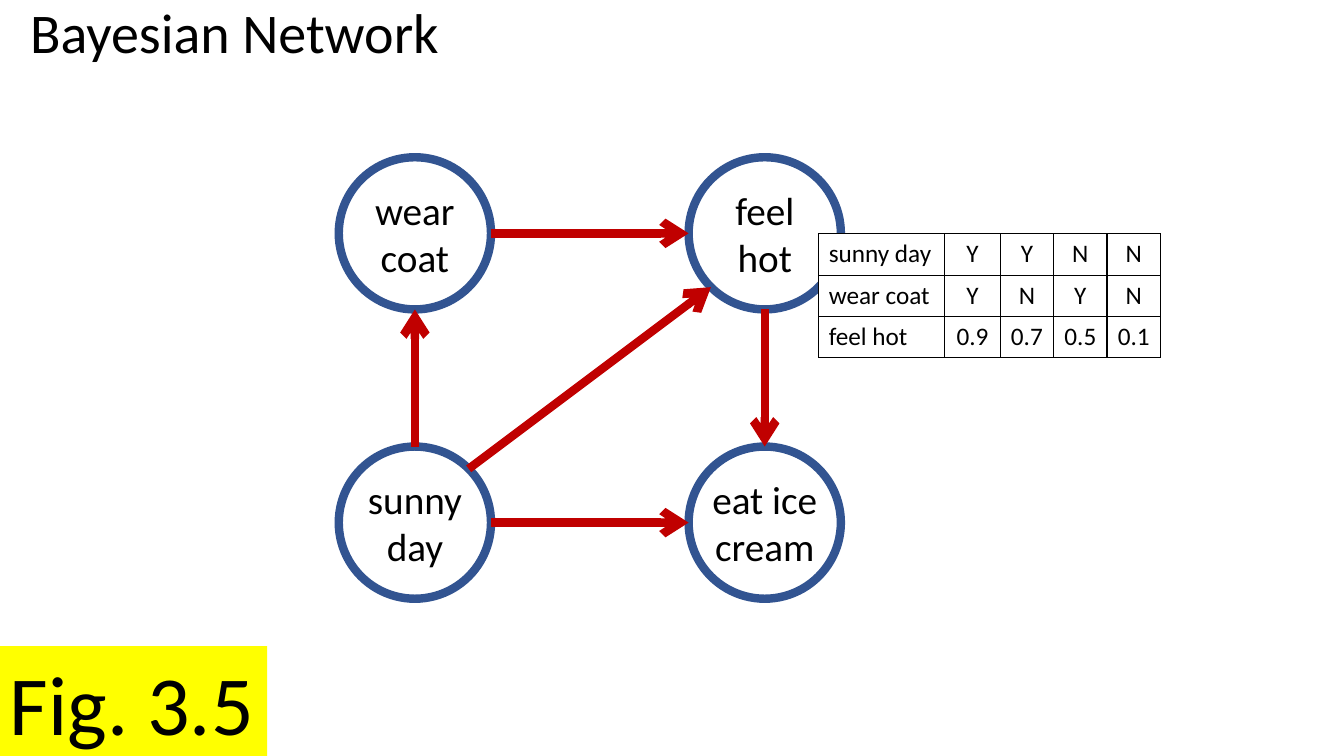
import math

import lxml.etree
import pptx
import pptx.dml.color
import pptx.enum.shapes
import pptx.enum.text
import pptx.oxml.ns
import pptx.util

COLORS = {"paper": "FFFFFF", "ink": "000000", "ring": "325491", "arrow": "C00000", "tag": "FFFF00"}
FONT = "Calibri"
SLIDE_WIDTH, SLIDE_HEIGHT = 13.33, 7.5
DIAMETER = 1.51
COLUMN_STEP, ROW_STEP = 3.47, 2.87
LABEL_HEIGHT = 1.04
THICK = 6

# Label: (column, row, label width)
NODES = {
    "wear\ncoat": (0, 0, 1.0),
    "feel\nhot": (1, 0, 0.79),
    "sunny\nday": (0, 1, 1.15),
    "eat ice\ncream": (1, 1, 1.25),
}
DIAGONAL = math.sqrt(0.5)
# Start node, end node, direction in which the arrow leaves the start
ARROWS = [
    ("feel\nhot", "eat ice\ncream", (0, 1)),
    ("sunny\nday", "wear\ncoat", (0, -1)),
    ("wear\ncoat", "feel\nhot", (1, 0)),
    ("sunny\nday", "feel\nhot", (DIAGONAL, -DIAGONAL)),
    ("sunny\nday", "eat ice\ncream", (1, 0)),
]
PROBABILITIES = [
    ["sunny day", "Y", "Y", "N", "N"],
    ["wear coat", "Y", "N", "Y", "N"],
    ["feel hot", "0.9", "0.7", "0.5", "0.1"],
]
COLUMN_WIDTHS = [1.25, 0.55, 0.53, 0.53, 0.53]
ROW_HEIGHT = 0.41


def inches(*lengths):
    return [pptx.util.Inches(length) for length in lengths]


def color(name):
    return pptx.dml.color.RGBColor.from_string(COLORS[name])


def set_all(target, **values):
    for name, value in values.items():
        setattr(target, name, value)


def fill_solid(target, name):
    target.fill.solid()
    target.fill.fore_color.rgb = color(name)


def write(frame, text, size, align="LEFT", **frame_values):
    set_all(frame, **frame_values)
    paragraph = frame.paragraphs[0]
    paragraph.text = text
    paragraph.alignment = getattr(pptx.enum.text.PP_ALIGN, align)
    for run in paragraph.runs:
        set_all(run.font, name=FONT, size=pptx.util.Pt(size))
        run.font.color.rgb = color("ink")
    return paragraph


def add_title(slide, left, top, width, height):
    title = slide.shapes.title
    left, top, width, height = inches(left, top, width, height)
    set_all(title, left=left, top=top, width=width, height=height)
    paragraph = write(title.text_frame, "Bayesian Network", 40,
                      vertical_anchor=pptx.enum.text.MSO_ANCHOR.TOP)
    paragraph.line_spacing = 0.9


def add_node(slide, label, label_width, left, top):
    group = slide.shapes.add_group_shape()
    circle = group.shapes.add_shape(pptx.enum.shapes.MSO_SHAPE.OVAL,
                                    *inches(left, top, DIAMETER, DIAMETER))
    circle.shadow.inherit = False
    fill_solid(circle, "paper")
    circle.line.color.rgb = color("ring")
    circle.line.width = pptx.util.Pt(THICK)
    box = group.shapes.add_textbox(*inches(
        left + (DIAMETER - label_width) / 2, top + (DIAMETER - LABEL_HEIGHT) / 2,
        label_width, LABEL_HEIGHT))
    write(box.text_frame, label, 28, "CENTER", word_wrap=False,
          auto_size=pptx.enum.text.MSO_AUTO_SIZE.SHAPE_TO_FIT_TEXT)


def add_arrow(slide, start, end):
    arrow = slide.shapes.add_connector(pptx.enum.shapes.MSO_CONNECTOR.STRAIGHT,
                                       *inches(*start, *end))
    arrow.line.color.rgb = color("arrow")
    arrow.line.width = pptx.util.Pt(THICK)
    qualified = pptx.oxml.ns.qn
    lxml.etree.SubElement(arrow.line._get_or_add_ln(), qualified("a:tailEnd"), type="arrow")
    lxml.etree.SubElement(arrow._element.spPr, qualified("a:effectLst"))


def add_network(slide, left, top):
    radius = DIAMETER / 2
    centers = {}
    for label, (column, row, label_width) in NODES.items():
        node_left, node_top = left + column * COLUMN_STEP, top + row * ROW_STEP
        add_node(slide, label, label_width, node_left, node_top)
        centers[label] = (node_left + radius, node_top + radius)
    for source, target, direction in ARROWS:
        start = [center + radius * part for center, part in zip(centers[source], direction)]
        end = [center - radius * part for center, part in zip(centers[target], direction)]
        add_arrow(slide, start, end)


def add_borders(cell):
    qualified = pptx.oxml.ns.qn
    properties = cell._tc.get_or_add_tcPr()
    for position, side in enumerate(("a:lnL", "a:lnR", "a:lnT", "a:lnB")):
        border = lxml.etree.Element(qualified(side), w=str(pptx.util.Pt(1)))
        solid = lxml.etree.SubElement(border, qualified("a:solidFill"))
        lxml.etree.SubElement(solid, qualified("a:srgbClr"), val=COLORS["ink"])
        properties.insert(position, border)


def add_probability_table(slide, left, top):
    rows, columns = len(PROBABILITIES), len(COLUMN_WIDTHS)
    table = slide.shapes.add_table(rows, columns, *inches(
        left, top, sum(COLUMN_WIDTHS), rows * ROW_HEIGHT)).table
    set_all(table, first_row=False, horz_banding=False)
    for column, width in zip(table.columns, COLUMN_WIDTHS):
        column.width = pptx.util.Inches(width)
    for row, values in zip(table.rows, PROBABILITIES):
        row.height = pptx.util.Inches(ROW_HEIGHT)
        for index, (cell, value) in enumerate(zip(row.cells, values)):
            fill_solid(cell, "paper")
            add_borders(cell)
            write(cell.text_frame, value, 18, "CENTER" if index else "LEFT")


def add_figure_tag(slide, left, top, width, height):
    tag = slide.shapes.add_textbox(*inches(left, top, width, height))
    fill_solid(tag, "tag")
    write(tag.text_frame, "Fig. 3.5", 60, word_wrap=False,
          auto_size=pptx.enum.text.MSO_AUTO_SIZE.SHAPE_TO_FIT_TEXT)


def main():
    presentation = pptx.Presentation()
    width, height = inches(SLIDE_WIDTH, SLIDE_HEIGHT)
    set_all(presentation, slide_width=width, slide_height=height)
    title_only = presentation.slide_layouts.get_by_name("Title Only")
    slide = presentation.slides.add_slide(title_only)
    add_title(slide, 0.2, 0, 12.85, 1.44)
    add_network(slide, 3.36, 1.56)
    add_probability_table(slide, 8.12, 2.32)
    add_figure_tag(slide, 0, 6.41, 2.65, 1.11)
    presentation.save("out.pptx")


if __name__ == "__main__":
    main()
